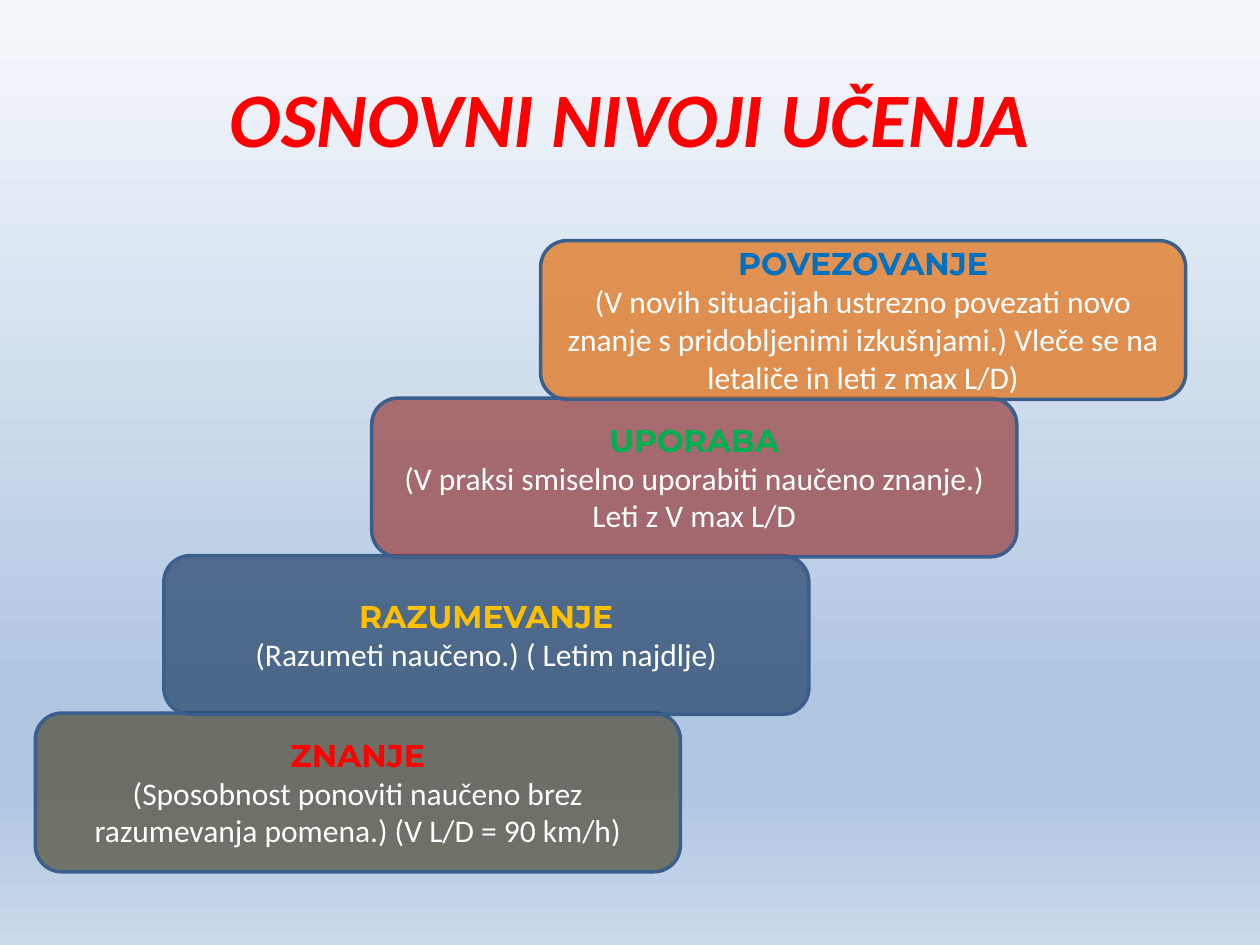
from lxml.etree import SubElement
from pptx import Presentation
from pptx.dml.color import RGBColor
from pptx.enum.shapes import MSO_SHAPE as Shape
from pptx.enum.text import MSO_ANCHOR as Anchor, PP_ALIGN as Align
from pptx.oxml.ns import qn
from pptx.util import Inches, Pt

TITLE = "OSNOVNI NIVOJI UČENJA"
BACKGROUND = [(0, "F6F9FC"), (74, "B0C6E1"), (83, "B0C6E1"), (100, "CAD9EB")]

# From the lowest step up: left edge, fill, opacity %, heading, heading colour, description
LEVELS = [
    (0.28, "4A452A", 67, "ZNANJE", "FF0000",
     "(Sposobnost ponoviti naučeno brez razumevanja pomena.) (V L/D = 90 km/h)"),
    (1.3, "17375E", 66, "RAZUMEVANJE", "FFC000",
     "(Razumeti naučeno.) ( Letim najdlje)"),
    (2.95, "953735", 68, "UPORABA", "00B050",
     "(V praksi smiselno uporabiti naučeno znanje.) Leti z V max L/D"),
    (4.29, "E46C0A", 69, "POVEZOVANJE", "0070C0",
     "(V novih situacijah ustrezno povezati novo znanje s pridobljenimi "
     "izkušnjami.) Vleče se na letaliče in leti z max L/D)"),
]
BOX_WIDTH, BOX_HEIGHT = 5.12, 1.26
LOWEST_TOP, RISE = 5.66, 1.25


def color(value):
    return RGBColor.from_string(value)


def write(para, text, size=18, font="Calibri", fill="FFFFFF", bold=False, italic=False):
    para.alignment = Align.CENTER
    span = para.add_run()
    span.text = text
    span.font.size = Pt(size)
    span.font.name = font
    span.font.color.rgb = color(fill)
    span.font.bold = bold
    span.font.italic = italic


def paint_background(page, stops):
    fill = page.background.fill
    fill.gradient()
    fill.gradient_angle = 270  # counter-clockwise, so first stop is at the top
    stop_list = page.element.find(".//" + qn("a:gsLst"))
    for old in list(stop_list):
        stop_list.remove(old)
    for position, value in stops:
        stop = SubElement(stop_list, qn("a:gs"), pos=str(position * 1000))
        SubElement(stop, qn("a:srgbClr"), val=value)


def add_level(page, left, top, fill, opacity, heading, heading_color, description):
    box = page.shapes.add_shape(Shape.ROUNDED_RECTANGLE, Inches(left), Inches(top),
                                Inches(BOX_WIDTH), Inches(BOX_HEIGHT))
    box.shadow.inherit = False
    box.fill.solid()
    box.fill.fore_color.rgb = color(fill)
    tint = box.element.spPr.find(qn("a:solidFill")).find(qn("a:srgbClr"))
    SubElement(tint, qn("a:alpha"), val=str(opacity * 1000))
    box.line.color.rgb = color("3A5F8C")
    box.line.width = Pt(2)
    frame = box.text_frame
    frame.word_wrap = True
    frame.vertical_anchor = Anchor.MIDDLE
    write(frame.paragraphs[0], heading, font="Montserrat", fill=heading_color, bold=True)
    write(frame.add_paragraph(), description)


def main():
    deck = Presentation()
    deck.slide_width, deck.slide_height = Inches(10), Inches(7.5)
    page = deck.slides.add_slide(deck.slide_layouts[5])
    paint_background(page, BACKGROUND)

    title = page.shapes.title
    title.left, title.top = Inches(0.5), Inches(0.3)
    title.width, title.height = Inches(9), Inches(1.25)
    title.text_frame.vertical_anchor = Anchor.MIDDLE
    write(title.text_frame.paragraphs[0], TITLE, size=44, fill="FF0000",
          bold=True, italic=True)

    for step, (left, *details) in enumerate(LEVELS):
        add_level(page, left, LOWEST_TOP - step * RISE, *details)

    deck.save("out.pptx")


if __name__ == "__main__":
    main()
